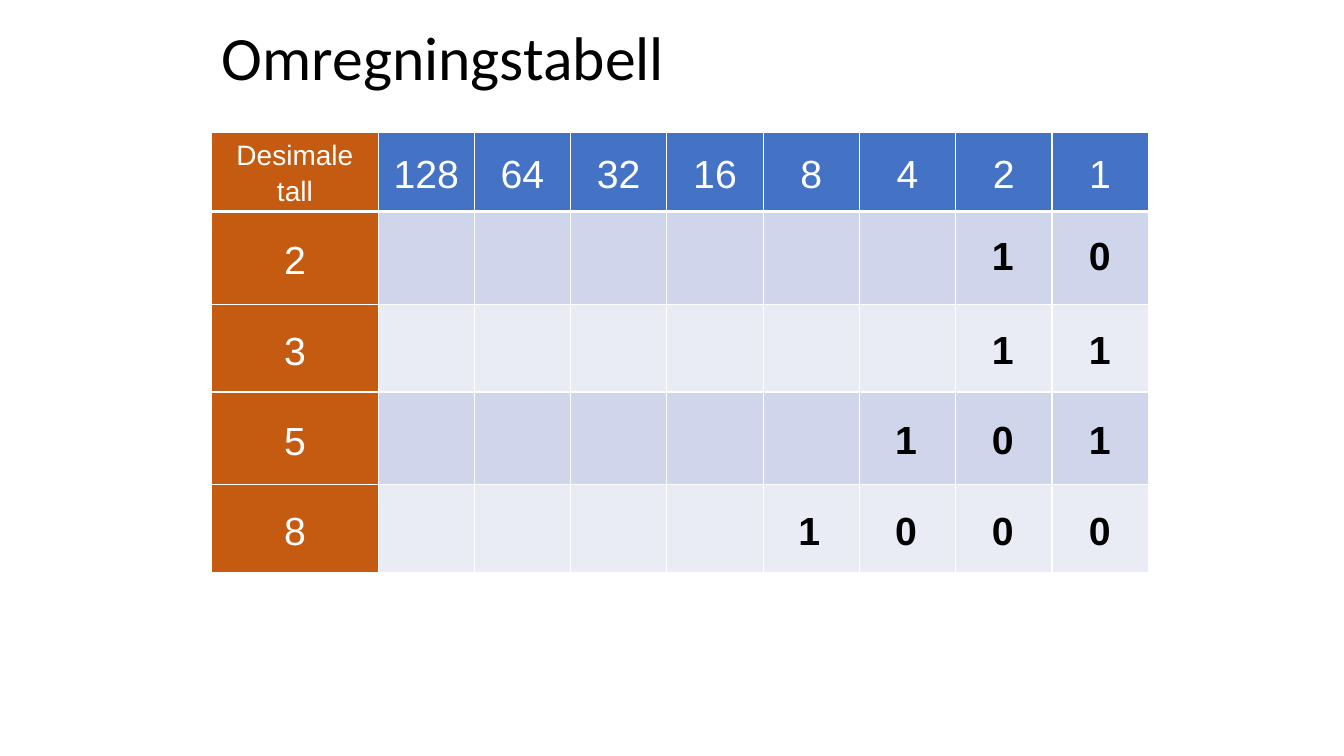
from dataclasses import dataclass
from typing import Any

from lxml.etree import SubElement as Sub
from pptx import Presentation
from pptx.dml.color import RGBColor
from pptx.enum.text import MSO_ANCHOR as Anchor, MSO_AUTO_SIZE as Auto, PP_ALIGN as Align
from pptx.oxml.ns import qn
from pptx.util import Inches, Pt

WHITE, BLACK = "FFFFFF", "000000"
BLUE, RUST = "4472C4", "C55A11"
BANDS = ("CFD5EA", "E9EBF5")
POWERS = [2 ** n for n in range(7, -1, -1)]
FIRST, STEP = 1.65, 0.96
HEIGHTS = (0.79, 0.92, 0.87, 0.92, 0.87)


@dataclass
class Number:
    value: int
    top: float  # top of its binary digits


@dataclass
class Style:
    size: float
    color: str
    name: str = "Arial"
    bold: bool = False


NUMBERS = [Number(2, 2.25), Number(3, 3.18), Number(5, 4.07), Number(8, 4.97)]
LABEL = Style(20, WHITE)
HEAD = Style(28, WHITE)
DIGIT = Style(28, BLACK, bold=True)
TITLE = Style(44, BLACK, "Calibri")


def paint(color: str) -> RGBColor:
    return RGBColor.from_string(color)


def put(obj: Any, values: dict[str, Any]) -> None:
    for key, value in values.items():
        setattr(obj, key, value)


def write(frame: Any, text: str, style: Style, **para: Any) -> None:
    line = frame.paragraphs[0]
    put(line, para)
    run = line.add_run()
    run.text = text
    put(run.font, {"size": Pt(style.size), "name": style.name, "bold": style.bold})
    run.font.color.rgb = paint(style.color)


def edge(cell: Any, base: float) -> None:
    props = cell._tc.get_or_add_tcPr()
    for spot, (side, width) in enumerate(zip("LRTB", (1, 1, 1, base))):
        line = Sub(props, qn(f"a:ln{side}"), w=str(Pt(width)))
        Sub(Sub(line, qn("a:solidFill")), qn("a:srgbClr"), val=WHITE)
        props.insert(spot, line)


def fill(cell: Any, color: str, text: str = "", style: Style = HEAD, base: float = 1) -> None:
    cell.fill.solid()
    cell.fill.fore_color.rgb = paint(color)
    edge(cell, base)
    if text:
        put(cell, {"vertical_anchor": Anchor.MIDDLE,
                   "margin_left": Inches(0.07), "margin_right": Inches(0.07),
                   "margin_top": 0, "margin_bottom": 0})
        write(cell.text_frame, text, style, alignment=Align.CENTER, line_spacing=1.15)


def digit(slide: Any, text: str, left: float, top: float) -> None:
    box = slide.shapes.add_textbox(Inches(left), Inches(top), Inches(0.42), Inches(0.57))
    put(box.text_frame, {"word_wrap": False, "auto_size": Auto.SHAPE_TO_FIT_TEXT})
    write(box.text_frame, text, DIGIT)


def main() -> None:
    deck = Presentation()
    put(deck, {"slide_width": Inches(13.33), "slide_height": Inches(7.5)})
    slide = deck.slides.add_slide(deck.slide_layouts[5])

    # Title
    title = slide.shapes.title
    put(title, {"left": Inches(2.1), "top": Inches(0.13),
                "width": Inches(9), "height": Inches(0.94)})
    put(title.text_frame, {"vertical_anchor": Anchor.MIDDLE, "word_wrap": True,
                           "auto_size": Auto.NONE})
    write(title.text_frame, "Omregningstabell", TITLE,
          alignment=Align.LEFT, line_spacing=0.9)

    # Table grid
    width = 9.29
    table = slide.shapes.add_table(
        len(HEIGHTS), len(POWERS) + 1, Inches(2.1), Inches(1.31),
        Inches(width), Inches(sum(HEIGHTS))).table
    for row, height in zip(table.rows, HEIGHTS):
        row.height = Inches(height)
    for n, col in enumerate(table.columns):
        col.width = Inches((width - FIRST) / len(POWERS) if n else FIRST)

    # Header row
    fill(table.cell(0, 0), RUST, "Desimale tall", LABEL, 3)
    for n, power in enumerate(POWERS, 1):
        fill(table.cell(0, n), BLUE, str(power), base=3)

    # Decimal numbers and banded cells
    for r, number in enumerate(NUMBERS, 1):
        fill(table.cell(r, 0), RUST, str(number.value))
        for n in range(1, len(POWERS) + 1):
            fill(table.cell(r, n), BANDS[(r - 1) % 2])

    # Binary digits, lined up from the right
    for number in NUMBERS:
        bits = f"{number.value:b}"
        for n, bit in enumerate(bits, 1):
            digit(slide, bit, 10.7 - STEP * (len(bits) - n), number.top)

    deck.save("out.pptx")


if __name__ == "__main__":
    main()
